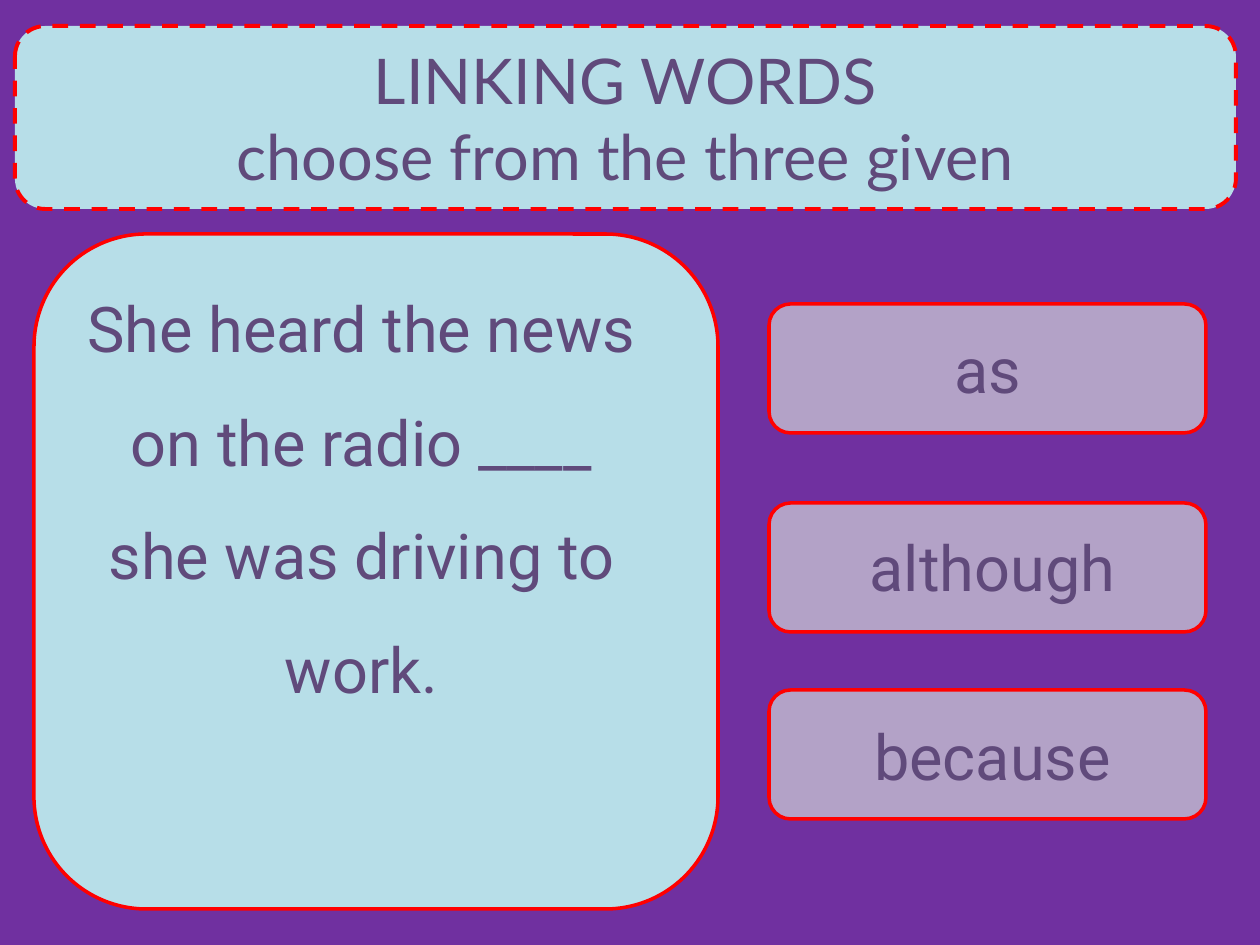
from dataclasses import dataclass

import pptx
import pptx.dml.color
import pptx.enum.dml
import pptx.enum.shapes
import pptx.enum.text
import pptx.presentation
import pptx.shapes.autoshape
import pptx.slide
import pptx.util

RGBColor = pptx.dml.color.RGBColor
PURPLE = RGBColor(0x70, 0x30, 0xA0)
PALE_BLUE = RGBColor(0xB7, 0xDE, 0xE8)
LILAC = RGBColor(0xB3, 0xA2, 0xC7)
RED = RGBColor(0xFF, 0x00, 0x00)
TEXT_PURPLE = RGBColor(0x60, 0x4A, 0x7B)

EMU_PER_PX = 914400 / 126


@dataclass(frozen=True)
class Box:
    left: int
    top: int
    width: int
    height: int

    def emu(self) -> list[int]:
        lengths = (self.left, self.top, self.width, self.height)
        return [round(length * EMU_PER_PX) for length in lengths]


@dataclass(frozen=True)
class Choice:
    word: str
    button_top: int
    label: Box


TITLE = Box(15, 26, 1221, 183)
PANEL = Box(34, 234, 684, 675)
SENTENCE = Box(64, 246, 595, 699)
CHOICES = [
    Choice("as", 304, Box(769, 324, 437, 89)),
    Choice("although", 503, Box(789, 522, 407, 89)),
    Choice("because", 690, Box(779, 711, 427, 89)),
]


def add_card(slide: pptx.slide.Slide, box: Box, color: RGBColor,
             line_width: float = 2) -> pptx.shapes.autoshape.Shape:
    shape = slide.shapes.add_shape(
        pptx.enum.shapes.MSO_SHAPE.ROUNDED_RECTANGLE, *box.emu())
    shape.shadow.inherit = False
    shape.fill.solid()
    shape.fill.fore_color.rgb = color
    shape.line.color.rgb = RED
    shape.line.width = pptx.util.Pt(line_width)
    return shape


def write_text(shape: pptx.shapes.autoshape.Shape, text: str, *,
               font: str = "Roboto", size: int = 36,
               color: RGBColor = TEXT_PURPLE,
               line_spacing: float = 1.0) -> None:
    frame = shape.text_frame
    frame.word_wrap = True
    frame.text = text
    for paragraph in frame.paragraphs:
        paragraph.alignment = pptx.enum.text.PP_ALIGN.CENTER
        paragraph.line_spacing = line_spacing
        for run in paragraph.runs:
            run.font.name = font
            run.font.size = pptx.util.Pt(size)
            run.font.color.rgb = color


def main() -> None:
    presentation = pptx.Presentation()
    presentation.slide_width = pptx.util.Inches(10)
    presentation.slide_height = pptx.util.Inches(7.5)
    slide = presentation.slides.add_slide(presentation.slide_layouts[6])
    slide.background.fill.solid()
    slide.background.fill.fore_color.rgb = PURPLE

    # Sentence panel
    add_card(slide, PANEL, PALE_BLUE)

    # Answer buttons with their labels
    for choice in CHOICES:
        add_card(slide, Box(769, choice.button_top, 437, 129), LILAC)
        write_text(slide.shapes.add_textbox(*choice.label.emu()), choice.word)

    # Title
    title = add_card(slide, TITLE, PALE_BLUE, line_width=2.25)
    title.line.dash_style = pptx.enum.dml.MSO_LINE.DASH
    write_text(title, "LINKING WORDS\nchoose from the three given", font="Lato")

    # Sentence to complete
    write_text(slide.shapes.add_textbox(*SENTENCE.emu()),
               "She heard the news on the radio ____ she was driving to work.",
               line_spacing=1.5)

    presentation.save("out.pptx")


if __name__ == "__main__":
    main()
